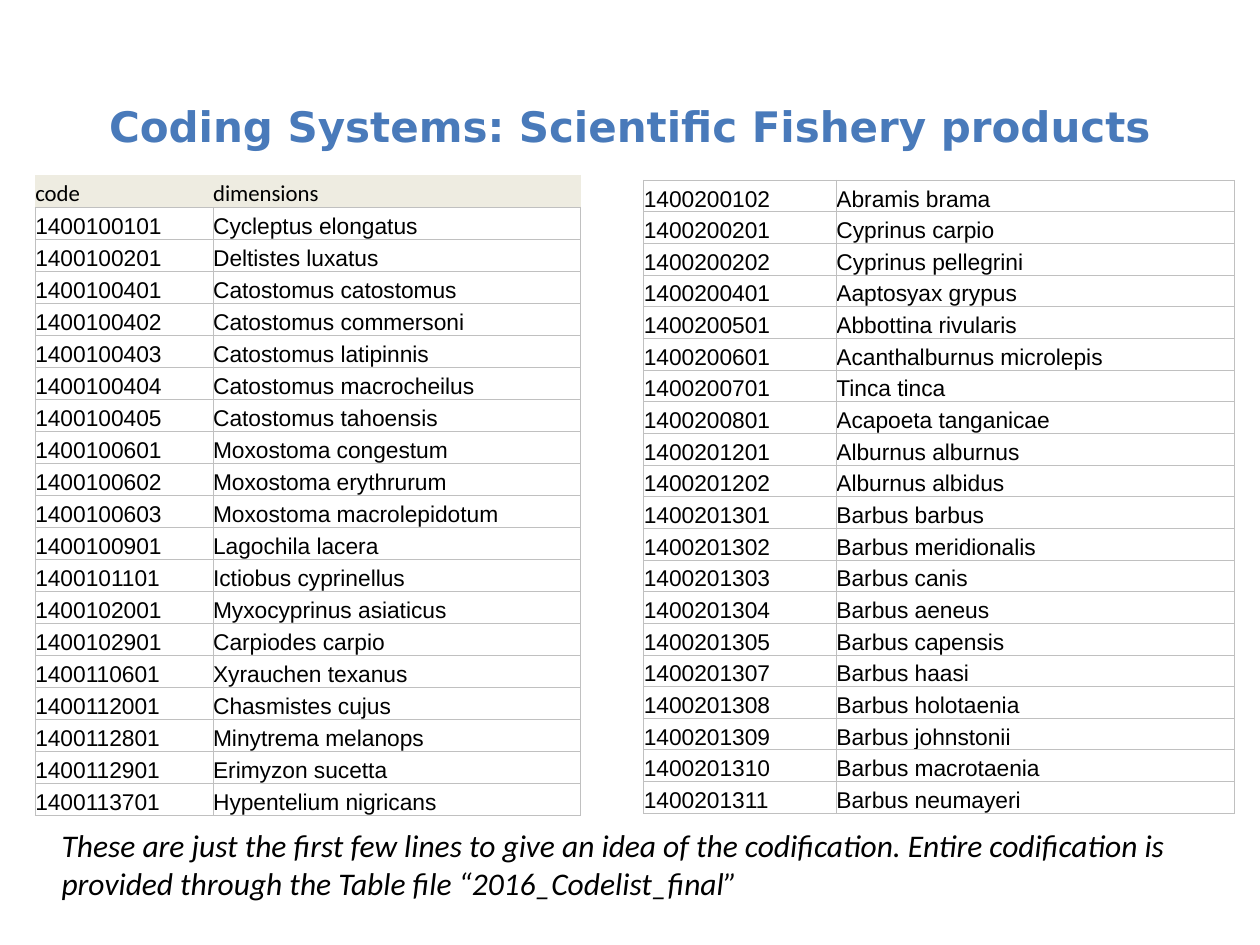
from lxml import etree
from pptx import Presentation, util as u
from pptx.dml.color import RGBColor
from pptx.enum import text
from pptx.oxml import ns

COLORS = {"title": "497ABA", "text": "000000", "header": "EEECE1", "border": "C0C0C0"}
TITLE = "Coding Systems: Scientific Fishery products"
CAPTION = ("These are just the first few lines to give an idea of the codification. "
           "Entire codification is provided through the Table file “2016_Codelist_final”")
HEADER = ("code", "dimensions")
SUCKERS = [
    ("1400100101", "Cycleptus elongatus"),
    ("1400100201", "Deltistes luxatus"),
    ("1400100401", "Catostomus catostomus"),
    ("1400100402", "Catostomus commersoni"),
    ("1400100403", "Catostomus latipinnis"),
    ("1400100404", "Catostomus macrocheilus"),
    ("1400100405", "Catostomus tahoensis"),
    ("1400100601", "Moxostoma congestum"),
    ("1400100602", "Moxostoma erythrurum"),
    ("1400100603", "Moxostoma macrolepidotum"),
    ("1400100901", "Lagochila lacera"),
    ("1400101101", "Ictiobus cyprinellus"),
    ("1400102001", "Myxocyprinus asiaticus"),
    ("1400102901", "Carpiodes carpio"),
    ("1400110601", "Xyrauchen texanus"),
    ("1400112001", "Chasmistes cujus"),
    ("1400112801", "Minytrema melanops"),
    ("1400112901", "Erimyzon sucetta"),
    ("1400113701", "Hypentelium nigricans"),
]
CARPS = [
    ("1400200102", "Abramis brama"),
    ("1400200201", "Cyprinus carpio"),
    ("1400200202", "Cyprinus pellegrini"),
    ("1400200401", "Aaptosyax grypus"),
    ("1400200501", "Abbottina rivularis"),
    ("1400200601", "Acanthalburnus microlepis"),
    ("1400200701", "Tinca tinca"),
    ("1400200801", "Acapoeta tanganicae"),
    ("1400201201", "Alburnus alburnus"),
    ("1400201202", "Alburnus albidus"),
    ("1400201301", "Barbus barbus"),
    ("1400201302", "Barbus meridionalis"),
    ("1400201303", "Barbus canis"),
    ("1400201304", "Barbus aeneus"),
    ("1400201305", "Barbus capensis"),
    ("1400201307", "Barbus haasi"),
    ("1400201308", "Barbus holotaenia"),
    ("1400201309", "Barbus johnstonii"),
    ("1400201310", "Barbus macrotaenia"),
    ("1400201311", "Barbus neumayeri"),
]
TABLES = [
    {"rows": [HEADER] + SUCKERS, "at": (0.28, 1.39, 4.33, 5.08)},
    {"rows": CARPS, "at": (5.11, 1.43, 4.69, 5.03)},
]
CODE_SHARE = 0.326
FORMATS = {
    "title": {"name": "DejaVu Sans", "size": u.Pt(24), "bold": True},
    "caption": {"name": "Calibri", "size": u.Pt(18), "italic": True},
    "header": {"name": "Calibri", "size": u.Pt(13), "bold": False},
    "body": {"name": "Arial", "size": u.Pt(13), "bold": False},
}
CELL_FORMAT = {"margin_left": 0, "margin_right": 0, "margin_top": 0, "margin_bottom": 0,
               "vertical_anchor": text.MSO_ANCHOR.BOTTOM}
TABLE_FORMAT = {"first_row": False, "horz_banding": False}


def set_all(target, values):
    for name, value in values.items():
        setattr(target, name, value)


def inches(box):
    return [u.Inches(length) for length in box]


def write(frame, words, kind, color="text"):
    paragraph = frame.paragraphs[0]
    run = paragraph.add_run()
    run.text = words
    set_all(run.font, FORMATS[kind])
    run.font.color.rgb = RGBColor.from_string(COLORS[color])
    return paragraph


def set_borders(cell, visible):
    properties = cell._tc.get_or_add_tcPr()
    for side in "LRTB":
        line = etree.SubElement(properties, ns.qn(f"a:ln{side}"), w=str(u.Pt(0.5)))
        if side in visible:
            fill = etree.SubElement(line, ns.qn("a:solidFill"))
            etree.SubElement(fill, ns.qn("a:srgbClr"), val=COLORS["border"])
        else:
            etree.SubElement(line, ns.qn("a:noFill"))


def add_code_table(slide, rows, at):
    left, top, width, height = inches(at)
    table = slide.shapes.add_table(len(rows), len(HEADER), left, top, width, height).table
    set_all(table, TABLE_FORMAT)
    table.columns[0].width = int(width * CODE_SHARE)
    table.columns[1].width = width - table.columns[0].width
    for row, values in zip(table.rows, rows):
        row.height = height // len(rows)
        is_header = values == HEADER
        for cell, words in zip(row.cells, values):
            set_all(cell, CELL_FORMAT)
            set_borders(cell, "B" if is_header else "LRTB")
            write(cell.text_frame, words, "header" if is_header else "body")
            if is_header:
                cell.fill.solid()
                cell.fill.fore_color.rgb = RGBColor.from_string(COLORS["header"])
            else:
                cell.fill.background()


def main():
    presentation = Presentation()
    presentation.slide_width, presentation.slide_height = inches((10, 7.5))
    slide = presentation.slides.add_slide(presentation.slide_layouts[5])

    title = slide.shapes.title
    title.left, title.top, title.width, title.height = inches((0, 0.73, 10, 0.54))
    title.text_frame.vertical_anchor = text.MSO_ANCHOR.MIDDLE
    write(title.text_frame, TITLE, "title", "title").alignment = text.PP_ALIGN.CENTER

    for table in TABLES:
        add_code_table(slide, **table)

    caption = slide.shapes.add_textbox(*inches((0.39, 6.51, 9.65, 0.71)))
    caption.text_frame.word_wrap = True
    write(caption.text_frame, CAPTION, "caption")

    presentation.save("out.pptx")


if __name__ == "__main__":
    main()
